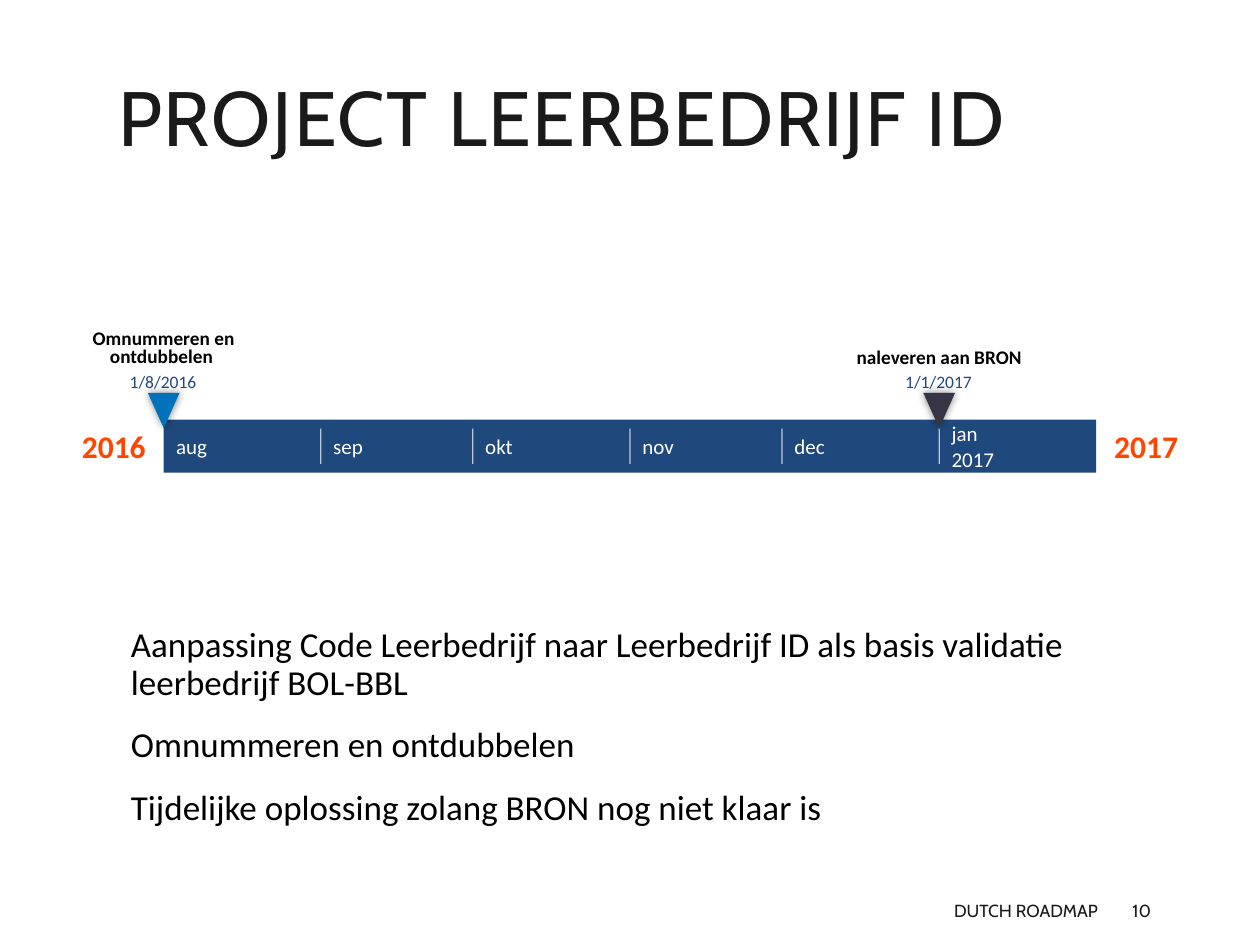
from lxml import etree
from pptx import Presentation
from pptx.dml.color import RGBColor
from pptx.enum.shapes import MSO_CONNECTOR, MSO_SHAPE
from pptx.enum.text import MSO_ANCHOR, PP_ALIGN
from pptx.oxml import parse_xml
from pptx.oxml.ns import qn
from pptx.util import Cm, Pt

LEFT, CENTER, RIGHT = PP_ALIGN.LEFT, PP_ALIGN.CENTER, PP_ALIGN.RIGHT
TOP, MIDDLE, BOTTOM = MSO_ANCHOR.TOP, MSO_ANCHOR.MIDDLE, MSO_ANCHOR.BOTTOM
RECT, TRIANGLE = MSO_SHAPE.RECTANGLE, MSO_SHAPE.ISOSCELES_TRIANGLE
STRAIGHT = MSO_CONNECTOR.STRAIGHT
A_NS = "http://schemas.openxmlformats.org/drawingml/2006/main"
SHADOW = (f'<a:effectLst xmlns:a="{A_NS}"><a:outerShdw blurRad="63500" dist="0" dir="0">'
          '<a:srgbClr val="000000"><a:alpha val="50000"/></a:srgbClr>'
          '</a:outerShdw></a:effectLst>')


def rgb(value):
    return RGBColor.from_string(value)


def add_text(x, y, w, h, lines, size, color, font="Calibri", bold=False, align=LEFT,
             anchor=MIDDLE, insets=(0.25, 0.13), wrap=True, spacing=None):
    tf = s.shapes.add_textbox(Cm(x), Cm(y), Cm(w), Cm(h)).text_frame
    tf.word_wrap, tf.vertical_anchor = wrap, anchor
    tf.margin_left = tf.margin_right = Cm(insets[0])
    tf.margin_top = tf.margin_bottom = Cm(insets[1])
    for i, line in enumerate(lines):
        p = tf.add_paragraph() if i else tf.paragraphs[0]
        p.text, p.alignment = line, align
        p.font.name, p.font.size, p.font.bold = font, Pt(size), bold
        p.font.color.rgb = rgb(color)
        if spacing:
            p.line_spacing = spacing
    return tf


prs = Presentation()
prs.slide_width, prs.slide_height = Cm(25.4), Cm(19.05)
s = prs.slides.add_slide(prs.slide_layouts[6])

# Footer and slide number
add_text(10.08, 17.98, 12.3, 0.76, ["DUTCH ROADMAP"], 10, "1A1A1A", "Cabin", align=RIGHT)
add_text(22.58, 17.98, 2.03, 0.76, ["10"], 10, "1A1A1A", "Cabin")

# Title, with slightly wider letter spacing
tf = add_text(2.13, 1.63, 20.24, 4.17, ["PROJECT LEERBEDRIJF ID"], 44, "1A1A1A", "Cabin",
              anchor=TOP, spacing=0.8)
tf.paragraphs[0].runs[0].font._element.set("spc", "100")

# Body text
tf = add_text(2.13, 12.52, 20.24, 5, [
    "Aanpassing Code Leerbedrijf naar Leerbedrijf ID als basis validatie leerbedrijf BOL-BBL",
    "Omnummeren en ontdubbelen",
    "Tijdelijke oplossing zolang BRON nog niet klaar is",
], 20, "000000", anchor=TOP, spacing=0.9)
tf.margin_left = Cm(0.51)
for p in tf.paragraphs:
    p.space_before, p.space_after = Pt(12), Pt(2)

# Timeline bar
BAR_X, BAR_Y, BAR_W, BAR_H = 3.3, 8.46, 18.8, 1.07
bar = s.shapes.add_shape(RECT, Cm(BAR_X), Cm(BAR_Y), Cm(BAR_W), Cm(BAR_H))
bar.shadow.inherit = False
bar.fill.solid()
bar.fill.fore_color.rgb = rgb("1F497D")
bar.line.fill.background()

# Years on either side of the bar
YEAR_W = 2.01
for x, year in ((BAR_X - YEAR_W, "2016"), (BAR_X + BAR_W, "2017")):
    add_text(x, BAR_Y, YEAR_W, BAR_H, [year], 18, "FF4500", bold=True, align=CENTER,
             insets=(0.36, 0), wrap=False)

# Months, each as wide as its number of days
MONTHS = [("aug", 31), ("sep", 30), ("okt", 31), ("nov", 30), ("dec", 31), ("jan\v2017", 31)]
day_w = BAR_W / sum(days for name, days in MONTHS)
x = BAR_X
for i, (name, days) in enumerate(MONTHS):
    if i:
        line = s.shapes.add_connector(STRAIGHT, Cm(x), Cm(8.64), Cm(x), Cm(9.35))
        line.line.width = Pt(0.75)
        line.line.color.rgb = rgb("FFFFFF")
        color = line._element.spPr.find(".//" + qn("a:srgbClr"))
        etree.SubElement(color, qn("a:alpha")).set("val", "70000")
        etree.SubElement(line._element.spPr, qn("a:effectLst"))
    add_text(x, BAR_Y, 3.12, BAR_H, [name], 12, "FFFFFF")
    x += days * day_w

# Milestones: day offset, date, marker colour, label, label top, width, height, wrapping
MILESTONES = [
    (153, "1/1/2017", "373545", "naleveren aan BRON", 7.04, 3.35, 0.38, False),
    (0, "1/8/2016", "0072BC", "Omnummeren en ontdubbelen ", 6.65, 2.95, 0.76, True),
]
MARK_W, DATE_W = 0.64, 1.37
for day, date, color, label, y, w, h, wrap in MILESTONES:
    x = BAR_X + day * day_w
    mark = s.shapes.add_shape(TRIANGLE, Cm(x - MARK_W / 2), Cm(7.92), Cm(MARK_W), Cm(0.71))
    mark.rotation = 180
    mark.fill.solid()
    mark.fill.fore_color.rgb = rgb(color)
    mark.line.fill.background()
    mark._element.spPr.append(parse_xml(SHADOW))
    add_text(x - w / 2, y, w, h, [label], 11, "000000", bold=True, align=CENTER,
             anchor=BOTTOM, insets=(0, 0), wrap=wrap, spacing=0.8)
    add_text(x - DATE_W / 2, 7.47, DATE_W, 0.43, [date], 10, "1F497E", anchor=TOP,
             insets=(0, 0), wrap=False)

prs.save("out.pptx")
